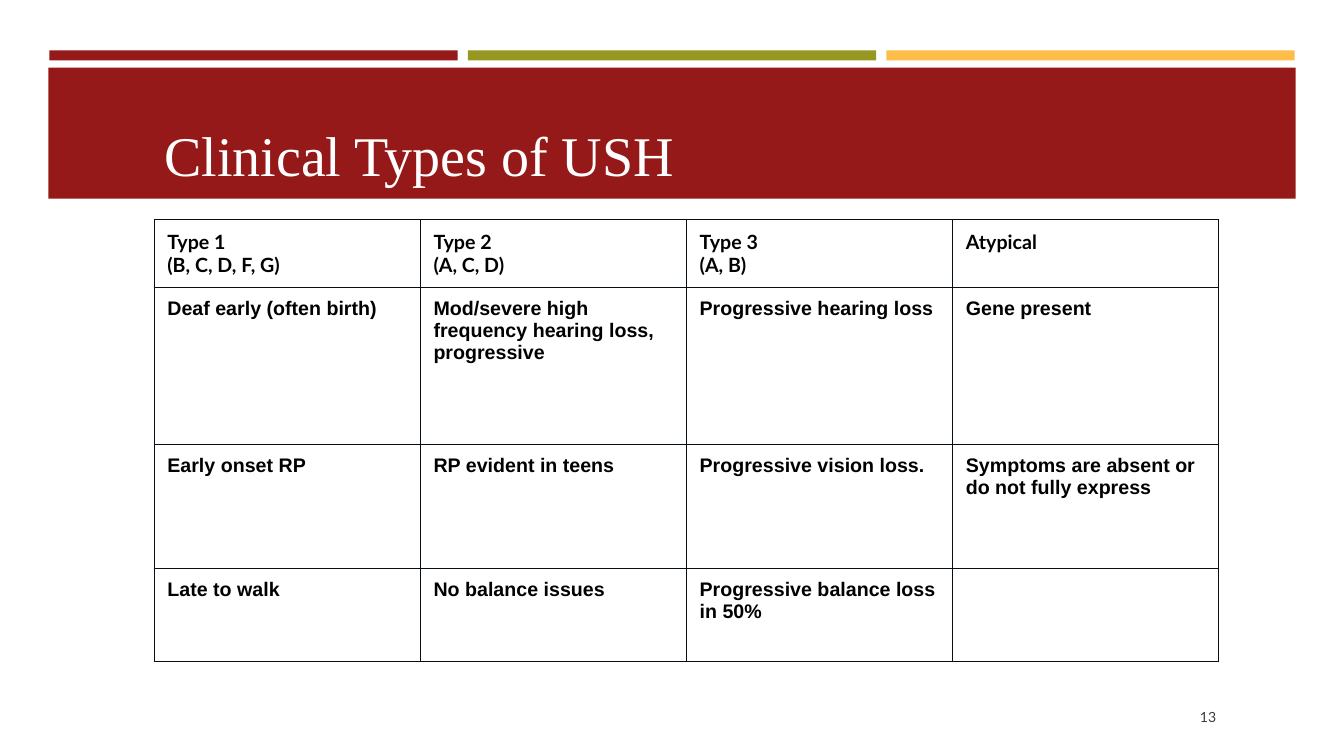
from dataclasses import dataclass

from lxml import etree
from pptx import Presentation
from pptx.dml.color import RGBColor
from pptx.enum.shapes import MSO_SHAPE
from pptx.enum.text import MSO_ANCHOR, PP_ALIGN
from pptx.oxml.ns import qn
from pptx.util import Emu, Pt

RECTANGLE = MSO_SHAPE.RECTANGLE
TOP, MIDDLE = MSO_ANCHOR.TOP, MSO_ANCHOR.MIDDLE
LEFT, RIGHT = PP_ALIGN.LEFT, PP_ALIGN.RIGHT
EMU_PER_PX = 9144  # 100 px to the inch
TITLE_ONLY_LAYOUT = 5


@dataclass(frozen=True)
class Theme:
    red: str = "961919"
    olive: str = "979821"
    amber: str = "FCBD49"
    white: str = "FFFFFF"
    black: str = "000000"
    grey: str = "3D3D3D"
    border: str = "060F18"
    title_font: str = "Times New Roman"
    header_font: str = "Lato"
    body_font: str = "Arial"
    title_size: float = 40
    cell_size: float = 14
    number_size: float = 10
    border_width: float = 0.75


def px(length):
    return Emu(length * EMU_PER_PX)


class SlideBuilder:
    def __init__(self, slide, theme):
        self.slide = slide
        self.theme = theme

    def bar(self, left, top, width, height, color):
        shape = self.slide.shapes.add_shape(
            RECTANGLE, px(left), px(top), px(width), px(height))
        shape.shadow.inherit = False
        shape.fill.solid()
        shape.fill.fore_color.rgb = RGBColor.from_string(color)
        shape.line.fill.background()

    def add_lines(self, frame, lines, font, size, color, bold=False, align=LEFT, spacing=1.0):
        """Fill a text frame with one paragraph for each line."""
        frame.word_wrap = True
        for index, line in enumerate(lines):
            para = frame.add_paragraph() if index else frame.paragraphs[0]
            para.alignment = align
            para.line_spacing = spacing
            span = para.add_run()
            span.text = line
            span.font.name = font
            span.font.size = Pt(size)
            span.font.bold = bold
            span.font.color.rgb = RGBColor.from_string(color)

    def title(self, left, top, width, height, text):
        box = self.slide.shapes.title
        box.left, box.top, box.width, box.height = map(px, (left, top, width, height))
        box.text_frame.vertical_anchor = TOP
        self.add_lines(box.text_frame, [text], self.theme.title_font,
                       self.theme.title_size, self.theme.white, spacing=0.89)

    def page_number(self, left, top, width, height, text):
        box = self.slide.shapes.add_textbox(px(left), px(top), px(width), px(height))
        box.text_frame.vertical_anchor = MIDDLE
        self.add_lines(box.text_frame, [text], self.theme.header_font,
                       self.theme.number_size, self.theme.grey, align=RIGHT)

    def cell_borders(self, cell):
        properties = cell._tc.get_or_add_tcPr()
        for side in ("a:lnL", "a:lnR", "a:lnT", "a:lnB"):
            line = etree.SubElement(properties, qn(side), w=str(Pt(self.theme.border_width)))
            fill = etree.SubElement(line, qn("a:solidFill"))
            etree.SubElement(fill, qn("a:srgbClr"), val=self.theme.border)

    def table(self, left, top, column_width, row_heights, rows):
        columns = len(rows[0])
        frame = self.slide.shapes.add_table(
            len(rows), columns, px(left), px(top),
            px(column_width * columns), px(sum(row_heights)))
        table = frame.table
        table.first_row = table.horz_banding = False
        for column in table.columns:
            column.width = px(column_width)
        for row_index, (height, texts) in enumerate(zip(row_heights, rows)):
            table.rows[row_index].height = px(height)
            font = self.theme.body_font if row_index else self.theme.header_font
            for column_index, lines in enumerate(texts):
                cell = table.cell(row_index, column_index)
                self.cell_borders(cell)
                cell.fill.background()
                cell.margin_left = cell.margin_right = px(13)
                cell.margin_top = cell.margin_bottom = px(10)
                self.add_lines(cell.text_frame, lines, font, self.theme.cell_size,
                               self.theme.black, bold=True)


USH_TYPES = [
    [["Type 1", "(B, C, D, F, G)"], ["Type 2", "(A, C, D)"],
     ["Type 3", "(A, B)"], ["Atypical"]],
    [["Deaf early (often birth)"],
     ["Mod/severe high frequency hearing loss, progressive"],
     ["Progressive hearing loss"], ["Gene present"]],
    [["Early onset RP"], ["RP evident in teens"], ["Progressive vision loss."],
     ["Symptoms are absent or do not fully express"]],
    [["Late to walk"], ["No balance issues"],
     ["Progressive balance loss in 50%"], []],
]


def main():
    deck = Presentation()
    deck.slide_width, deck.slide_height = px(1333), px(750)
    theme = Theme()
    page = SlideBuilder(
        deck.slides.add_slide(deck.slide_layouts[TITLE_ONLY_LAYOUT]), theme)

    for index, color in enumerate((theme.red, theme.olive, theme.amber)):
        page.bar(49 + index * 415, 50, 405, 10, color)
    page.bar(48, 67, 1237, 130, theme.red)
    # The title placeholder comes first in the tree; bring it above the band.
    tree = page.slide.shapes._spTree
    tree.append(page.slide.shapes.title._element)

    page.title(153, 123, 1050, 67, "Clinical Types of USH")
    page.table(153, 218, 264, (67, 156, 123, 92), USH_TYPES)
    page.page_number(1167, 689, 49, 44, "13")
    deck.save("out.pptx")


if __name__ == "__main__":
    main()
